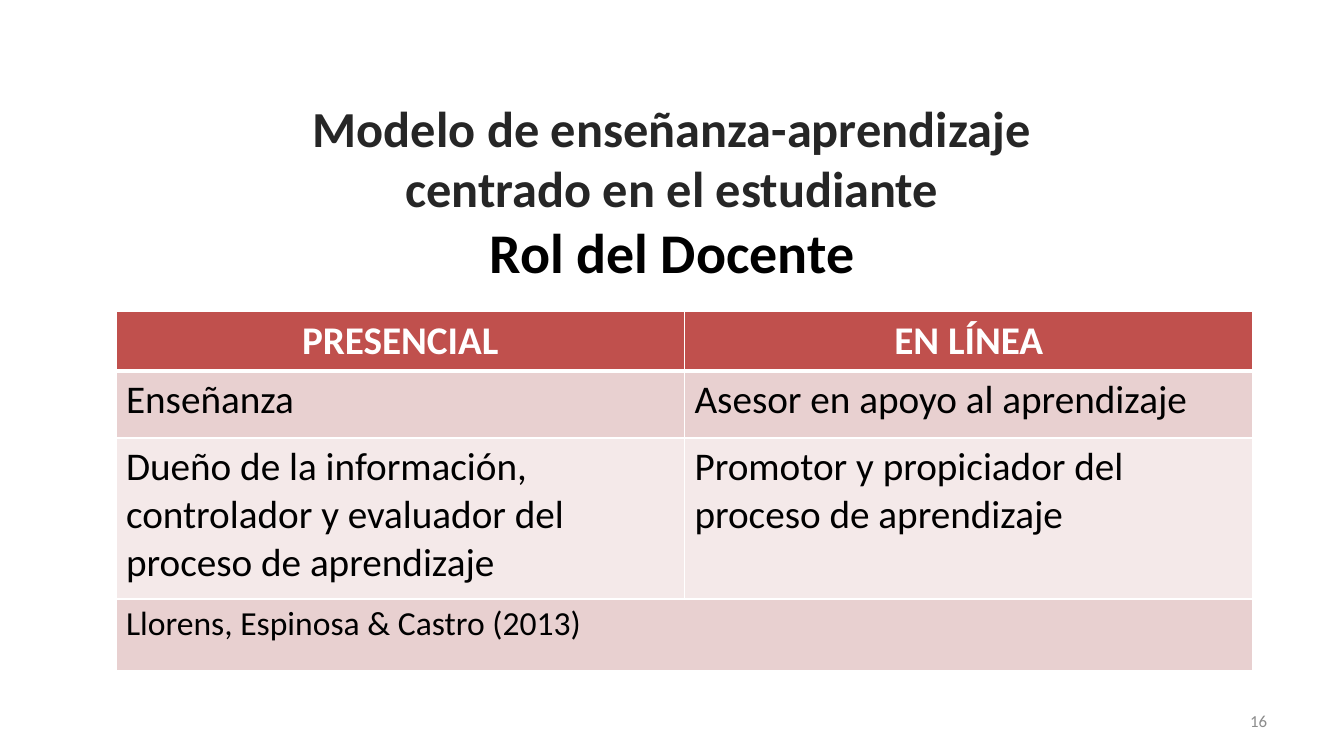
from lxml import etree
from pptx import Presentation
from pptx import util as u
from pptx.dml.color import RGBColor
from pptx.enum import text
from pptx.oxml import ns

PX = 914400 / 100.8
WHITE = RGBColor(0xFF, 0xFF, 0xFF)
BLACK = RGBColor(0x00, 0x00, 0x00)
CHARCOAL = RGBColor(0x26, 0x26, 0x26)
GRAY = RGBColor(0x8C, 0x8C, 0x8C)
RED = RGBColor(0xC0, 0x50, 0x4D)
ROSE = RGBColor(0xE8, 0xD0, 0xD0)
PALE_ROSE = RGBColor(0xF4, 0xE9, 0xE9)

LEFT, CENTER, RIGHT = text.PP_ALIGN.LEFT, text.PP_ALIGN.CENTER, text.PP_ALIGN.RIGHT
TOP, MIDDLE, BOTTOM = (text.MSO_ANCHOR.TOP, text.MSO_ANCHOR.MIDDLE,
                       text.MSO_ANCHOR.BOTTOM)


def px(*lengths):
    return [u.Emu(round(length * PX)) for length in lengths]


class SlideBuilder:
    font = "Calibri"

    def __init__(self, slide):
        self.slide = slide

    def add_words(self, paragraph, words, color, align, **formats):
        paragraph.alignment = align
        run = paragraph.add_run()
        run.text = words
        run.font.color.rgb = color
        for name, value in {"name": self.font, "bold": False, **formats}.items():
            setattr(run.font, name, value)

    def text_box(self, place, anchor, align, lines):
        """Add a box holding one paragraph per (words, points, color, bold)."""
        frame = self.slide.shapes.add_textbox(*px(*place)).text_frame
        frame.word_wrap = True
        frame.vertical_anchor = anchor
        for number, (words, points, color, bold) in enumerate(lines):
            paragraph = frame.add_paragraph() if number else frame.paragraphs[0]
            self.add_words(paragraph, words, color, align, size=u.Pt(points), bold=bold)

    def border(self, cell, widths):
        """Draw white edges; widths maps L, R, T, B to points, in that order."""
        properties = cell._tc.get_or_add_tcPr()
        for position, (side, points) in enumerate(widths.items()):
            line = etree.Element(ns.qn(f"a:ln{side}"), w=str(u.Pt(points)))
            fill = etree.SubElement(line, ns.qn("a:solidFill"))
            etree.SubElement(fill, ns.qn("a:srgbClr"), val=str(WHITE))
            properties.insert(position, line)

    def table(self, place, heights, rows, fills, sizes):
        """Add a table with a header row; a row with one text spans all columns."""
        columns = len(rows[0])
        table = self.slide.shapes.add_table(len(rows), columns, *px(*place)).table
        for row, height in zip(table.rows, px(*heights)):
            row.height = height
        for r, words in enumerate(rows):
            header = r == 0
            for c in range(columns):
                cell = table.cell(r, c)
                cell.fill.solid()
                cell.fill.fore_color.rgb = fills[r]
                cell.vertical_anchor = MIDDLE if header else TOP
                self.border(cell, {"L": 1, "R": 1, "T": 3 if r == 1 else 1,
                                   "B": 3 if header else 1})
                if c < len(words):
                    self.add_words(cell.text_frame.paragraphs[0], words[c],
                                   WHITE if header else BLACK,
                                   CENTER if header else LEFT,
                                   size=u.Pt(sizes[r]), bold=header)
            if len(words) < columns:
                table.cell(r, 0).merge(table.cell(r, columns - 1))


def main():
    deck = Presentation()
    deck.slide_width, deck.slide_height = px(1344, 756)
    builder = SlideBuilder(deck.slides.add_slide(deck.slide_layouts[6]))

    builder.text_box((964, 701, 313, 40), MIDDLE, RIGHT, [("16", 12, GRAY, False)])

    heights = [60, 67, 161, 72]
    roles = [
        ["PRESENCIAL", "EN LÍNEA"],
        ["Enseñanza", "Asesor en apoyo al aprendizaje"],
        ["Dueño de la información, controlador y evaluador del proceso de aprendizaje",
         "Promotor y propiciador del proceso de aprendizaje"],
        ["Llorens, Espinosa & Castro (2013)"],
    ]
    builder.table((116, 311, 1137, sum(heights)), heights, roles,
                  fills=[RED, ROSE, PALE_ROSE, ROSE], sizes=[28, 28, 28, 24])

    builder.text_box((210, 164, 924, 126), BOTTOM, CENTER, [
        ("Modelo de enseñanza-aprendizaje centrado en el estudiante", 36, CHARCOAL, True),
        ("Rol del Docente", 40, BLACK, True),
    ])
    deck.save("out.pptx")


if __name__ == "__main__":
    main()
